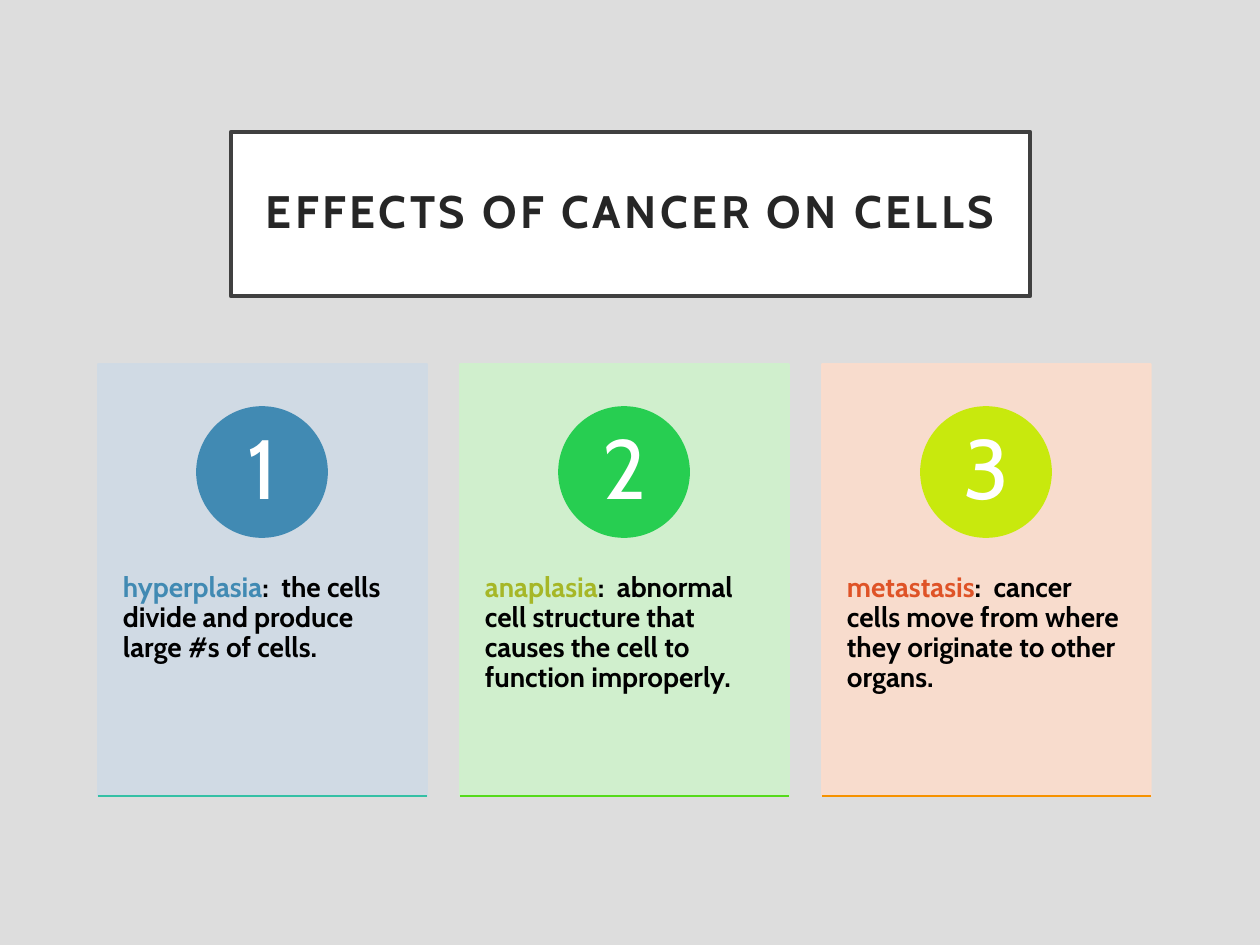
import pptx
import pptx.dml.color
import pptx.enum.shapes
import pptx.enum.text
import pptx.oxml.ns
import pptx.util
from lxml import etree

RGBColor = pptx.dml.color.RGBColor
Pt = pptx.util.Pt
MSO_SHAPE = pptx.enum.shapes.MSO_SHAPE
PP_ALIGN = pptx.enum.text.PP_ALIGN
MIDDLE = pptx.enum.text.MSO_ANCHOR.MIDDLE
qn = pptx.oxml.ns.qn

BACKGROUND = RGBColor(0xDD, 0xDD, 0xDD)
WHITE = RGBColor(0xFF, 0xFF, 0xFF)
BLACK = RGBColor(0x00, 0x00, 0x00)
TITLE_TEXT = RGBColor(0x26, 0x26, 0x26)
TITLE_BORDER = RGBColor(0x40, 0x40, 0x40)
BLUE = RGBColor(0x41, 0x8A, 0xB3)
PALE_BLUE = RGBColor(0xCF, 0xDA, 0xE5)
TEAL = RGBColor(0x34, 0xC0, 0xA5)
OLIVE = RGBColor(0xA6, 0xB7, 0x27)
PALE_GREEN = RGBColor(0xCF, 0xF1, 0xCC)
GREEN = RGBColor(0x27, 0xCE, 0x51)
BRIGHT_GREEN = RGBColor(0x54, 0xDB, 0x1A)
RED = RGBColor(0xDF, 0x53, 0x27)
PALE_ORANGE = RGBColor(0xFB, 0xDC, 0xCC)
LIME = RGBColor(0xC8, 0xE9, 0x0D)
ORANGE = RGBColor(0xF6, 0x92, 0x00)

FONT = "Cabin"
PX_PER_INCH = 126
CARD_LEFT, CARD_TOP, CARD_WIDTH, CARD_HEIGHT, CARD_PITCH = 98, 364, 329, 432, 362
CIRCLE_TOP, CIRCLE_SIZE = 407, 130

EFFECTS = [
    ("hyperplasia", ":  the cells divide and produce large #s of cells.",
     BLUE, PALE_BLUE, BLUE, TEAL),
    ("anaplasia", ":  abnormal cell structure that causes the cell to function improperly.",
     OLIVE, PALE_GREEN, GREEN, BRIGHT_GREEN),
    ("metastasis", ":  cancer cells move from where they originate to other organs.",
     RED, PALE_ORANGE, LIME, ORANGE),
]


def px(*lengths):
    """Turn pixel lengths into a list of EMU."""
    return [round(length * 914400 / PX_PER_INCH) for length in lengths]


def set_text_frame(frame, side, top, size, color, bold):
    """Set equal side and top/bottom insets, wrapping, line spacing and font."""
    frame.word_wrap = True
    frame.auto_size = pptx.enum.text.MSO_AUTO_SIZE.NONE
    frame.margin_left, frame.margin_right = px(side, side)
    frame.margin_top, frame.margin_bottom = px(top, top)
    frame.paragraphs[0].line_spacing = 0.9
    for run in frame.paragraphs[0].runs:
        run.font.name = FONT
        run.font.size = Pt(size)
        run.font.bold = bold
        run.font.color.rgb = color


deck = pptx.Presentation()
deck.slide_width, deck.slide_height = px(1260, 945)
slide = deck.slides.add_slide(deck.slide_layouts[5])
slide.background.fill.solid()
slide.background.fill.fore_color.rgb = BACKGROUND

title = slide.shapes.title
title.left, title.top, title.width, title.height = px(231, 132, 799, 164)
title.fill.solid()
title.fill.fore_color.rgb = WHITE
title.line.color.rgb = TITLE_BORDER
title.line.width = Pt(2.5)
title.text_frame.text = "EFFECTS OF CANCER ON CELLS"
title.text_frame.vertical_anchor = MIDDLE
set_text_frame(title.text_frame, 25, 25, 26, TITLE_TEXT, True)
heading = title.text_frame.paragraphs[0]
heading.alignment = PP_ALIGN.CENTER
heading.runs[0].font._element.set("spc", "200")

for index, (term, meaning, term_color, card_color, circle_color, rule_color) in enumerate(EFFECTS):
    left = CARD_LEFT + index * CARD_PITCH

    card = slide.shapes.add_shape(
        MSO_SHAPE.RECTANGLE, *px(left, CARD_TOP, CARD_WIDTH, CARD_HEIGHT))
    circle = slide.shapes.add_shape(
        MSO_SHAPE.OVAL,
        *px(left + (CARD_WIDTH - CIRCLE_SIZE) // 2, CIRCLE_TOP, CIRCLE_SIZE, CIRCLE_SIZE))
    for shape, color in ((card, card_color), (circle, circle_color)):
        shape.shadow.inherit = False
        shape.fill.solid()
        shape.fill.fore_color.rgb = color
        shape.line.color.rgb = color
        shape.line.width = Pt(1)
    for tint in card._element.spPr.iter(qn("a:srgbClr")):
        etree.SubElement(tint, qn("a:alpha"), val="90000")

    circle.text_frame.text = str(index + 1)
    circle.text_frame.vertical_anchor = MIDDLE
    circle.text_frame.paragraphs[0].alignment = PP_ALIGN.CENTER
    set_text_frame(circle.text_frame, 10, 1, 48, WHITE, False)

    definition = slide.shapes.add_textbox(*px(left, 528, CARD_WIDTH, 260))
    sentence = definition.text_frame.paragraphs[0]
    for words in (term, meaning):
        sentence.add_run().text = words
    set_text_frame(definition.text_frame, 25, 45, 16, BLACK, True)
    sentence.runs[0].font.color.rgb = term_color

    bottom = CARD_TOP + CARD_HEIGHT
    rule = slide.shapes.add_connector(
        pptx.enum.shapes.MSO_CONNECTOR.STRAIGHT,
        *px(left, bottom, left + CARD_WIDTH, bottom))
    rule.line.color.rgb = rule_color
    rule.line.width = Pt(1)
    etree.SubElement(rule._element.spPr, qn("a:effectLst"))

deck.save("out.pptx")
